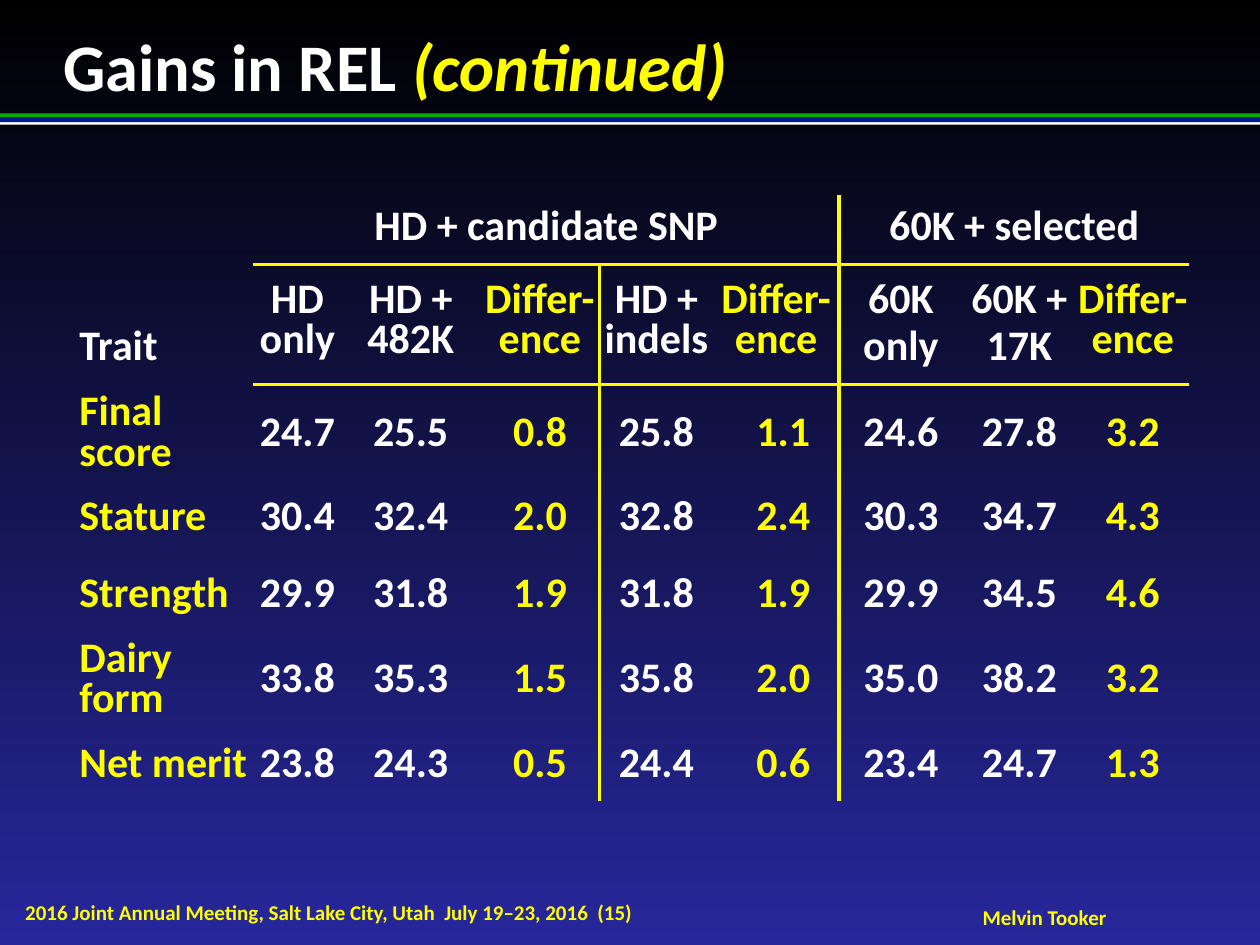
from dataclasses import dataclass

from lxml import etree
from pptx import Presentation
from pptx.dml.color import RGBColor
from pptx.enum import shapes, text
from pptx.oxml import ns
from pptx.util import Inches, Pt


@dataclass(frozen=True)
class Theme:
    font: str = "Calibri"
    white: str = "FFFFFF"
    yellow: str = "FFFF00"
    green: str = "01AF00"
    blue: str = "001799"
    top: str = "000000"
    bottom: str = "27279B"
    title_size: int = 38
    table_size: int = 24
    footer_size: int = 12
    line_pitch: int = 23
    wide_pitch: int = 27
    rule_width: float = 2.25


THEME = Theme()
COLUMN_WIDTHS = [1.38, 0.7, 1.1, 0.95, 0.9, 1, 0.98, 0.9, 0.9]
ROW_HEIGHTS = [0.55, 0.89] + [0.61] * 5
MERGES = [((0, 0), (1, 0)), ((0, 1), (0, 5)), ((0, 6), (0, 8))]
ROWS = [
    ["Trait", "HD + candidate SNP", "", "", "", "", "60K + selected", "", ""],
    ["", "HD only", "HD + 482K", "Differ-ence", "HD + indels", "Differ-ence",
     "60K only", "60K + 17K", "Differ-ence"],
    ["Final score", "24.7", "25.5", "0.8", "25.8", "1.1", "24.6", "27.8", "3.2"],
    ["Stature", "30.4", "32.4", "2.0", "32.8", "2.4", "30.3", "34.7", "4.3"],
    ["Strength", "29.9", "31.8", "1.9", "31.8", "1.9", "29.9", "34.5", "4.6"],
    ["Dairy form", "33.8", "35.3", "1.5", "35.8", "2.0", "35.0", "38.2", "3.2"],
    ["Net merit", "23.8", "24.3", "0.5", "24.4", "0.6", "23.4", "24.7", "1.3"],
]
DIFFERENCE_COLUMNS = (3, 5, 8)
INDELS_DIFFERENCE = 5


def rgb(color):
    return RGBColor.from_string(color)


def style_run(run, size, color, italic=None):
    font = run.font
    font.name, font.size, font.bold, font.italic = THEME.font, Pt(size), True, italic
    font.color.rgb = rgb(color)


def clear_margins(frame):
    frame.margin_left = frame.margin_top = frame.margin_right = frame.margin_bottom = 0


def line_xml(tag, color, width):
    """Return a line element; a color of None gives an invisible line."""
    line = etree.Element(ns.qn(tag), w=str(Pt(width)))
    if color is None:
        etree.SubElement(line, ns.qn("a:noFill"))
    else:
        fill = etree.SubElement(line, ns.qn("a:solidFill"))
        etree.SubElement(fill, ns.qn("a:srgbClr"), val=color)
    return line


def paint_background(slide):
    fill = slide.background.fill
    fill.gradient()
    fill.gradient_angle = 270
    for stop, color, position in zip(fill.gradient_stops, (THEME.top, THEME.bottom), (0, 1)):
        stop.color.rgb = rgb(color)
        stop.position = position


def add_stripe(slide, top, height, color):
    stripe = slide.shapes.add_shape(shapes.MSO_SHAPE.RECTANGLE, 0, Inches(top),
                                    Inches(10), Inches(height))
    stripe.shadow.inherit = False
    stripe.fill.solid()
    stripe.fill.fore_color.rgb = rgb(color)
    stripe.line.fill.background()


def add_footer(slide, words, left, top, width, wrap, align):
    footer = slide.shapes.add_textbox(Inches(left), Inches(top), Inches(width), Inches(0.2))
    frame = footer.text_frame
    clear_margins(frame)
    frame.word_wrap = wrap
    frame.auto_size = text.MSO_AUTO_SIZE.SHAPE_TO_FIT_TEXT
    frame.vertical_anchor = text.MSO_ANCHOR.MIDDLE
    frame.text = words
    frame.paragraphs[0].alignment = align
    style_run(frame.paragraphs[0].runs[0], THEME.footer_size, THEME.yellow)


def fill_title(slide):
    title = slide.shapes.title
    title.left, title.top, title.width, title.height = map(Inches, (0.5, 0.2, 9, 0.64))
    frame = title.text_frame
    clear_margins(frame)
    frame.vertical_anchor = text.MSO_ANCHOR.TOP
    frame.auto_size = text.MSO_AUTO_SIZE.SHAPE_TO_FIT_TEXT
    heading = frame.paragraphs[0]
    heading.alignment = text.PP_ALIGN.LEFT
    for words, color, italic in (("Gains in REL ", THEME.white, None),
                                 ("(continued)", THEME.yellow, True)):
        run = heading.add_run()
        run.text = words
        style_run(run, THEME.title_size, color, italic)


def rule_cell(cell, row, col):
    """Draw the yellow rules beside the column groups and under both header rows."""
    last_col = col + cell.span_width - 1 if cell.is_merge_origin else col
    last_row = row + cell.span_height - 1 if cell.is_merge_origin else row

    def divider_after(column):
        return column == 5 or (column == 3 and row > 0)

    def rule_below(line_row):
        return line_row in (0, 1) and col > 0

    sides = {"a:lnL": divider_after(col - 1), "a:lnR": divider_after(last_col),
             "a:lnT": rule_below(row - 1), "a:lnB": rule_below(last_row)}
    properties = cell._tc.get_or_add_tcPr()
    for place, (tag, ruled) in enumerate(sides.items()):
        color = THEME.yellow if ruled else None
        properties.insert(place, line_xml(tag, color, THEME.rule_width))


def write_cell(cell, words, row, col):
    is_data = row > 1
    bottom_set = row == 0
    outlined = is_data and col == INDELS_DIFFERENCE
    cell.margin_left = 0
    cell.margin_right = Inches(0.23 if outlined else 0)
    cell.margin_top = Inches(0 if bottom_set else 0.1)
    cell.margin_bottom = Inches(0 if is_data else 0.1)
    cell.vertical_anchor = text.MSO_ANCHOR.BOTTOM if bottom_set else text.MSO_ANCHOR.MIDDLE

    cell.text_frame.text = words
    entry = cell.text_frame.paragraphs[0]
    wide = row == 1 and col in (6, 7)
    entry.line_spacing = Pt(THEME.wide_pitch if wide else THEME.line_pitch)
    if outlined:
        entry.alignment = text.PP_ALIGN.RIGHT
    elif col > 0:
        entry.alignment = text.PP_ALIGN.CENTER

    yellow = (row > 0 and col in DIFFERENCE_COLUMNS) or (is_data and col == 0)
    for run in entry.runs:
        style_run(run, THEME.table_size, THEME.yellow if yellow else THEME.white)
        if outlined:
            run._r.get_or_add_rPr().insert(0, line_xml("a:ln", THEME.yellow, 0.75))


def add_gains_table(slide):
    frame = slide.shapes.add_table(len(ROWS), len(COLUMN_WIDTHS), Inches(0.63), Inches(1.55),
                                   Inches(sum(COLUMN_WIDTHS)), Inches(sum(ROW_HEIGHTS)))
    table = frame.table
    table.first_row = table.horz_banding = False
    for column, width in zip(table.columns, COLUMN_WIDTHS):
        column.width = Inches(width)
    for table_row, height in zip(table.rows, ROW_HEIGHTS):
        table_row.height = Inches(height)
    for first, last in MERGES:
        table.cell(*first).merge(table.cell(*last))
    for row, entries in enumerate(ROWS):
        for col, words in enumerate(entries):
            cell = table.cell(row, col)
            cell.fill.background()
            rule_cell(cell, row, col)
            if words:
                write_cell(cell, words, row, col)


def main():
    deck = Presentation()
    deck.slide_width, deck.slide_height = Inches(10), Inches(7.5)
    slide = deck.slides.add_slide(deck.slide_layouts[5])
    paint_background(slide)
    add_stripe(slide, 0.9, 0.03, THEME.green)
    add_stripe(slide, 0.96, 0.03, THEME.white)
    add_stripe(slide, 0.93, 0.04, THEME.blue)
    add_footer(slide, "2016 Joint Annual Meeting, Salt Lake City, Utah  July 19–23, 2016  (15)",
               0.2, 7.14, 7.11, True, text.PP_ALIGN.LEFT)
    add_footer(slide, "Melvin Tooker", 7.79, 7.18, 1, False, text.PP_ALIGN.CENTER)
    fill_title(slide)
    add_gains_table(slide)
    deck.save("out.pptx")


if __name__ == "__main__":
    main()
